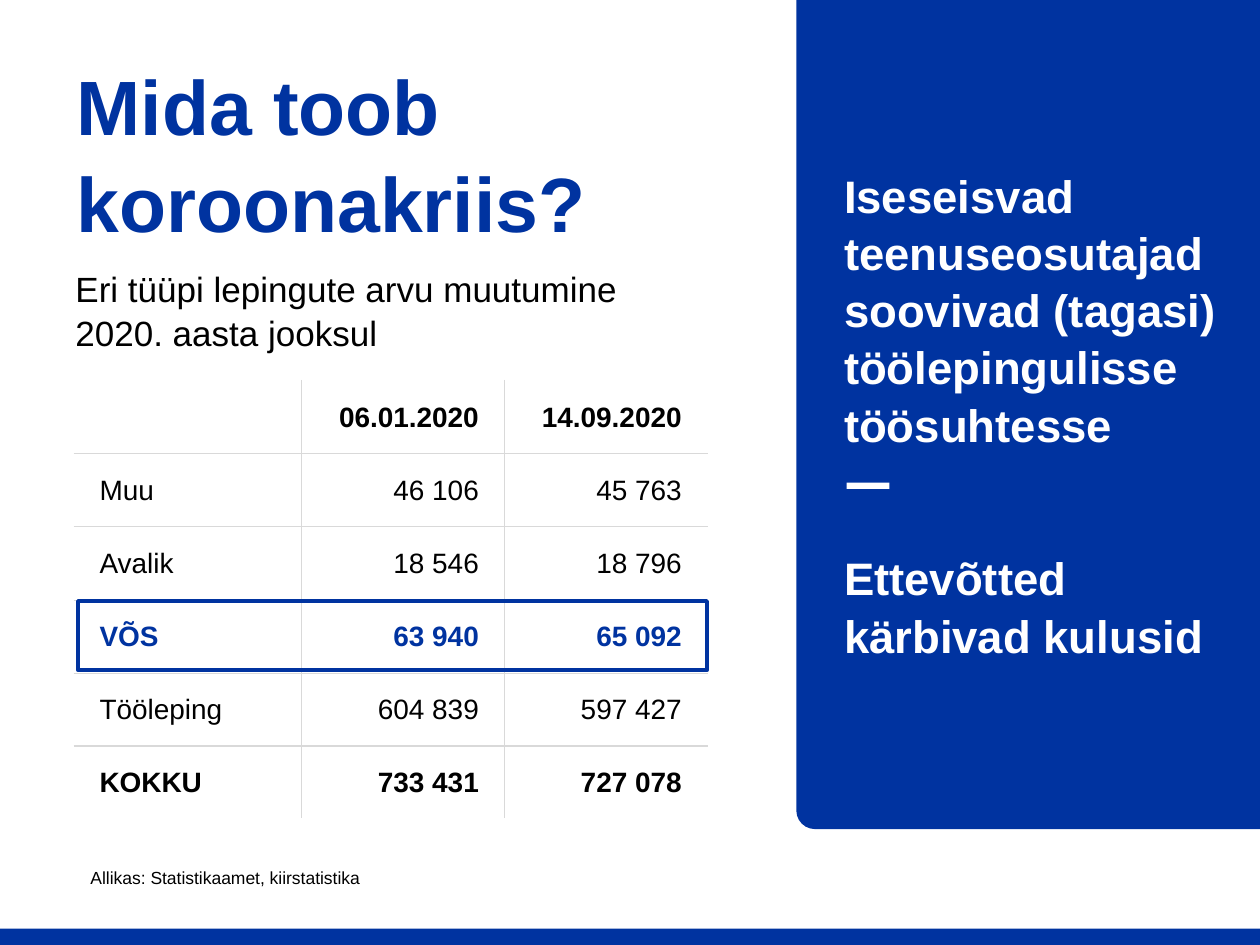
from dataclasses import dataclass

from lxml.etree import SubElement
from pptx import Presentation
from pptx.dml.color import RGBColor
from pptx.enum.shapes import MSO_SHAPE as Shape
from pptx.enum.text import MSO_ANCHOR as Anchor, PP_ALIGN as Align
from pptx.oxml.ns import qn
from pptx.util import Emu, Inches, Pt

BLUE, WHITE, BLACK, GREY = "0033A0", "FFFFFF", "000000", "D9D9D9"
FONT = "Arial"
COLUMNS, ROWS = 100, 75


@dataclass(frozen=True)
class Box:
    col: float
    row: float
    cols: float
    rows: float


@dataclass(frozen=True)
class Label:
    box: Box
    text: str
    size: int
    color: str = BLACK
    bold: bool = False
    anchor: Anchor = Anchor.TOP
    spacing: float = 1.05
    indent: float = 0
    gap: float = 0


@dataclass(frozen=True)
class Block:
    box: Box
    fill: str | None = None
    line: str | None = None
    kind: Shape = Shape.RECTANGLE
    rotation: int = 0
    corner: float | None = None


@dataclass(frozen=True)
class Row:
    cells: tuple[str, str, str]
    color: str = BLACK
    bold: bool = False
    rule: float = 0.25


BLOCKS = (
    Block(Box(0, 73.7, 100, 1.3), BLUE),
    Block(Box(63.2, 0, 36.8, 65.8), BLUE, kind=Shape.ROUND_1_RECTANGLE, rotation=180, corner=0.04),
    Block(Box(67.2, 38.3, 3.4, 0.5), WHITE),
)
HIGHLIGHT = Block(Box(6.2, 47.7, 49.9, 5.5), line=BLUE)

LABELS = (
    Label(Box(5.1, 5.7, 51, 12.5), "Mida toob\vkoroonakriis?", 44, BLUE, True, Anchor.MIDDLE),
    Label(Box(62.2, 12.6, 35.8, 45.4),
          "Iseseisvad teenuseosutajad soovivad (tagasi) töölepingulisse töösuhtesse\n"
          "Ettevõtted kärbivad kulusid", 26, WHITE, True, indent=3.8, gap=55),
    Label(Box(5, 20.6, 49.5, 7.7), "Eri tüüpi lepingute arvu muutumine 2020. aasta jooksul", 20),
    Label(Box(6.2, 68.2, 71.7, 2.7), "Allikas: Statistikaamet, kiirstatistika", 10),
)

TABLE_BOX = Box(5.9, 30.2, 50.2, 34.8)
TABLE_COLUMNS = (18, 16.1, 16.1)
TABLE_ROWS = (
    Row(("", "06.01.2020", "14.09.2020"), bold=True, rule=1),
    Row(("Muu", "46 106", "45 763")),
    Row(("Avalik", "18 546", "18 796")),
    Row(("VÕS", "63 940", "65 092"), BLUE, True),
    Row(("Tööleping", "604 839", "597 427"), rule=1),
    Row(("KOKKU", "733 431", "727 078"), bold=True),
)

prs = Presentation()
prs.slide_width, prs.slide_height = Inches(10), Inches(7.5)
slide = prs.slides.add_slide(prs.slide_layouts[6])


def rgb(color: str) -> RGBColor:
    return RGBColor.from_string(color)


def across(cols: float) -> Emu:
    return Emu(round(prs.slide_width * cols / COLUMNS))


def down(rows: float) -> Emu:
    return Emu(round(prs.slide_height * rows / ROWS))


def place(box: Box) -> tuple[Emu, Emu, Emu, Emu]:
    return across(box.col), down(box.row), across(box.cols), down(box.rows)


def style_runs(p, size: int, color: str, bold: bool) -> None:
    for r in p.runs:
        r.font.name, r.font.size, r.font.bold = FONT, Pt(size), bold
        r.font.color.rgb = rgb(color)


def draw_block(block: Block) -> None:
    s = slide.shapes.add_shape(block.kind, *place(block.box))
    s.shadow.inherit = False
    s.rotation = block.rotation
    if block.corner is not None:
        s.adjustments[0] = block.corner
    if block.fill:
        s.fill.solid()
        s.fill.fore_color.rgb = rgb(block.fill)
    else:
        s.fill.background()
    if block.line:
        s.line.color.rgb = rgb(block.line)
        s.line.width = Pt(2.25)
    else:
        s.line.fill.background()


def draw_label(label: Label) -> None:
    tf = slide.shapes.add_textbox(*place(label.box)).text_frame
    tf.word_wrap = True
    tf.vertical_anchor = label.anchor
    tf.text = label.text
    for i, p in enumerate(tf.paragraphs):
        p.line_spacing = label.spacing
        if i:
            p.space_before = Pt(label.gap)
        if label.indent:
            p._p.get_or_add_pPr().set("marL", str(across(label.indent)))
        style_runs(p, label.size, label.color, label.bold)


def add_border(cell, side: str, color: str, width: float) -> None:
    ln = SubElement(cell._tc.get_or_add_tcPr(), qn(f"a:ln{side}"), w=str(Pt(width)))
    SubElement(SubElement(ln, qn("a:solidFill")), qn("a:srgbClr"), val=color)


def draw_table(box: Box, widths: tuple[float, ...], rows: tuple[Row, ...]) -> None:
    table = slide.shapes.add_table(len(rows), len(widths), *place(box)).table
    table.first_row = table.horz_banding = False
    for column, width in zip(table.columns, widths):
        column.width = across(width)
    outer = (WHITE, 1)
    rules = [outer, *((GREY, row.rule) for row in rows[:-1]), outer]
    dividers = [outer, *[(GREY, 0.25)] * (len(widths) - 1), outer]
    for i, row in enumerate(rows):
        table.rows[i].height = down(box.rows / len(rows))
        for j, text in enumerate(row.cells):
            cell = table.cell(i, j)
            cell.margin_left = cell.margin_right = across(2)
            cell.margin_top, cell.margin_bottom = down(0.1), 0
            cell.vertical_anchor = Anchor.MIDDLE
            cell.text = text
            p = cell.text_frame.paragraphs[0]
            p.alignment = Align.RIGHT if j else Align.LEFT
            style_runs(p, 16, row.color, row.bold)
            for side, border in zip("LRTB", (dividers[j], dividers[j + 1], rules[i], rules[i + 1])):
                add_border(cell, side, *border)
            cell.fill.background()


for block in BLOCKS:
    draw_block(block)
for label in LABELS:
    draw_label(label)
draw_table(TABLE_BOX, TABLE_COLUMNS, TABLE_ROWS)
draw_block(HIGHLIGHT)
prs.save("out.pptx")
